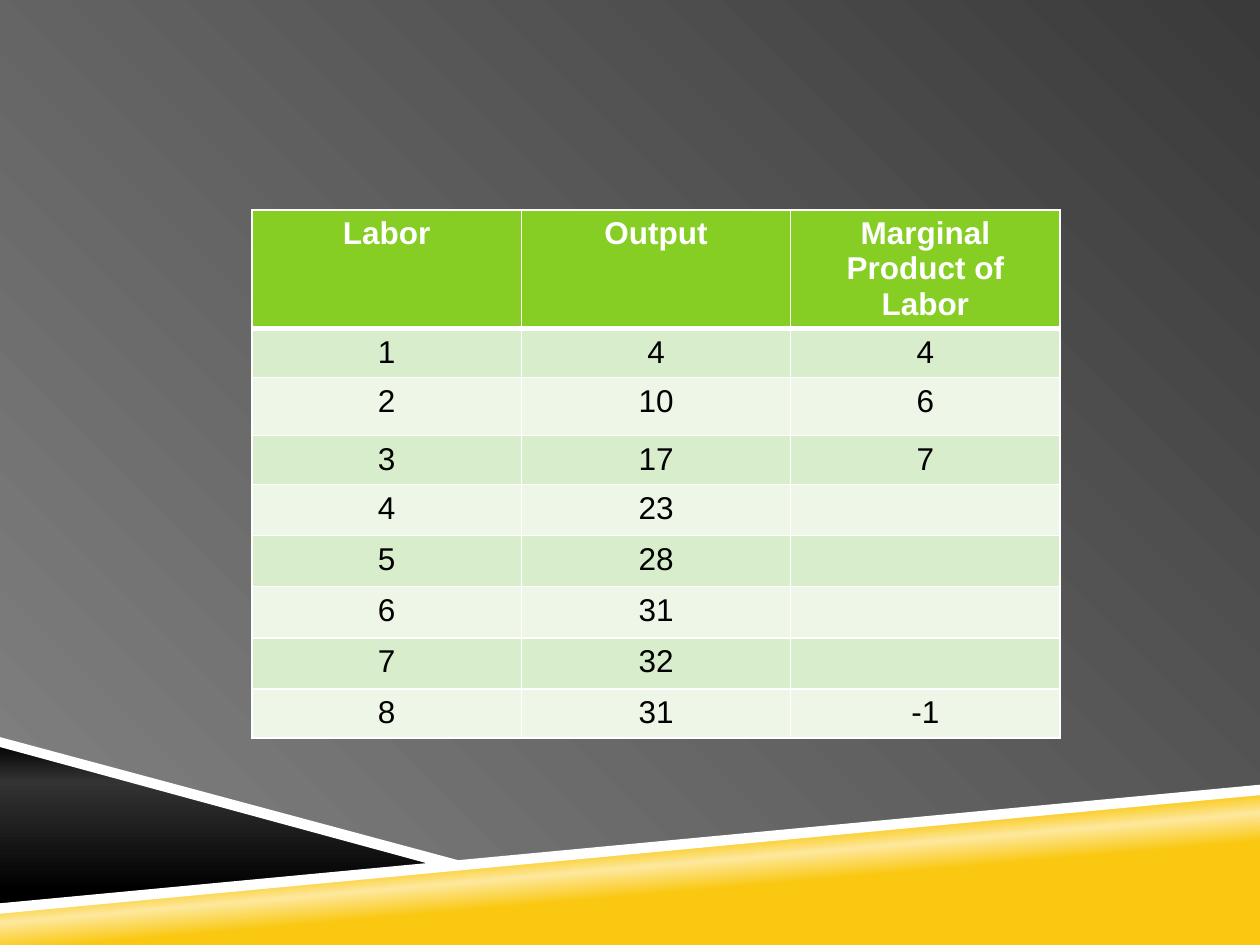
"""Build a slide with a table of labor, output and marginal product."""
from dataclasses import dataclass

from lxml.etree import SubElement
from pptx import Presentation
from pptx.dml.color import RGBColor
from pptx.dml.fill import FillFormat
from pptx.enum.text import PP_ALIGN
from pptx.oxml.ns import qn
from pptx.oxml.xmlchemy import BaseOxmlElement
from pptx.shapes.shapetree import SlideShapes
from pptx.slide import Slide
from pptx.table import _Cell
from pptx.util import Cm, Pt

WHITE = RGBColor(0xFF, 0xFF, 0xFF)
BLACK = RGBColor(0x00, 0x00, 0x00)
CHARCOAL = RGBColor(0x33, 0x33, 0x33)
DARK_GRAY = RGBColor(0x3A, 0x3A, 0x3A)
MID_GRAY = RGBColor(0x84, 0x84, 0x84)
YELLOW = RGBColor(0xFA, 0xC8, 0x10)
PALE_YELLOW = RGBColor(0xFD, 0xE8, 0x9E)
GREEN = RGBColor(0x86, 0xCE, 0x24)
BAND_DARK = RGBColor(0xD8, 0xED, 0xCB)
BAND_LIGHT = RGBColor(0xED, 0xF6, 0xE7)

WIDTH, HEIGHT = 25.4, 19.05
COLUMN_WIDTH = 5.43
HEADER_HEIGHT, ROW_HEIGHT, TALL_ROW_HEIGHT = 2.38, 0.99, 1.17
TALL_ROW = 2
THIN, THICK = Pt(1), Pt(3)

ROWS = [
    ("Labor", "Output", "Marginal Product of Labor"),
    ("1", "4", "4"),
    ("2", "10", "6"),
    ("3", "17", "7"),
    ("4", "23", ""),
    ("5", "28", ""),
    ("6", "31", ""),
    ("7", "32", ""),
    ("8", "31", "-1"),
]


@dataclass(frozen=True)
class Gradient:
    stops: tuple[tuple[int, RGBColor], ...]
    angle: float


@dataclass(frozen=True)
class Wedge:
    corners: tuple[tuple[float, float], ...]
    paint: Gradient | RGBColor


BACKDROP = Gradient(((0, MID_GRAY), (100, DARK_GRAY)), 45)
GOLD = Gradient(
    ((0, YELLOW), (39, YELLOW), (50, PALE_YELLOW), (58, YELLOW), (100, YELLOW)), 95
)
NIGHT = Gradient(((0, BLACK), (24, CHARCOAL), (90, BLACK), (100, BLACK)), 270)

WEDGES = [
    Wedge(((0, 18.31), (WIDTH, 15.93), (WIDTH, HEIGHT), (0, HEIGHT)), GOLD),
    Wedge(((0, 14.96), (9.12, 17.4), (0, 18.31)), NIGHT),
    Wedge(((WIDTH, 15.82), (0, 18.21), (0, 18.42), (WIDTH, 16.03)), WHITE),
    Wedge(((0, 14.86), (0, 15.06), (8.89, 17.48), (9.53, 17.42)), WHITE),
]


def paint_gradient(fill: FillFormat, owner: BaseOxmlElement, gradient: Gradient) -> None:
    fill.gradient()
    fill.gradient_angle = gradient.angle
    stop_list = next(owner.iter(qn("a:gsLst")))
    for default_stop in list(stop_list):
        stop_list.remove(default_stop)
    for percent, color in gradient.stops:
        stop = SubElement(stop_list, qn("a:gs"), pos=str(percent * 1000))
        SubElement(stop, qn("a:srgbClr"), val=str(color))


def draw_wedge(shapes: SlideShapes, wedge: Wedge) -> None:
    start, *others = [(Cm(x), Cm(y)) for x, y in wedge.corners]
    outline = shapes.build_freeform(*start)
    outline.add_line_segments(others, close=True)
    shape = outline.convert_to_shape()
    shape.shadow.inherit = False
    shape.line.fill.background()
    if isinstance(wedge.paint, Gradient):
        paint_gradient(shape.fill, shape.element, wedge.paint)
    else:
        shape.fill.solid()
        shape.fill.fore_color.rgb = wedge.paint


def draw_borders(cell: _Cell, top: int, bottom: int) -> None:
    properties = cell._tc.get_or_add_tcPr()
    for side, width in (("L", THIN), ("R", THIN), ("T", top), ("B", bottom)):
        border = SubElement(properties, qn(f"a:ln{side}"), w=str(width))
        paint = SubElement(border, qn("a:solidFill"))
        SubElement(paint, qn("a:srgbClr"), val=str(WHITE))


def fill_cell(cell: _Cell, text: str, row_index: int) -> None:
    is_header = row_index == 0
    draw_borders(
        cell,
        top=THICK if row_index == 1 else THIN,
        bottom=THICK if is_header else THIN,
    )
    band = BAND_DARK if row_index % 2 else BAND_LIGHT
    cell.fill.solid()
    cell.fill.fore_color.rgb = GREEN if is_header else band
    if not text:
        return
    paragraph = cell.text_frame.paragraphs[0]
    paragraph.alignment = PP_ALIGN.CENTER
    run = paragraph.add_run()
    run.text = text
    run.font.name = "Arial"
    run.font.size = Pt(18)
    run.font.bold = is_header
    run.font.color.rgb = WHITE if is_header else BLACK


def draw_product_table(slide: Slide) -> None:
    heights = [HEADER_HEIGHT] + [ROW_HEIGHT] * (len(ROWS) - 1)
    heights[TALL_ROW] = TALL_ROW_HEIGHT
    columns = len(ROWS[0])
    product_table = slide.shapes.add_table(
        len(ROWS), columns, Cm(5.08), Cm(4.23),
        Cm(COLUMN_WIDTH * columns), Cm(sum(heights)),
    ).table
    for row_index, (texts, height) in enumerate(zip(ROWS, heights)):
        product_table.rows[row_index].height = Cm(height)
        for column_index, text in enumerate(texts):
            fill_cell(product_table.cell(row_index, column_index), text, row_index)


def main() -> None:
    presentation = Presentation()
    presentation.slide_width = Cm(WIDTH)
    presentation.slide_height = Cm(HEIGHT)
    slide = presentation.slides.add_slide(presentation.slide_layouts[6])
    paint_gradient(slide.background.fill, slide.element, BACKDROP)
    for wedge in WEDGES:
        draw_wedge(slide.shapes, wedge)
    draw_product_table(slide)
    presentation.save("out.pptx")


if __name__ == "__main__":
    main()
